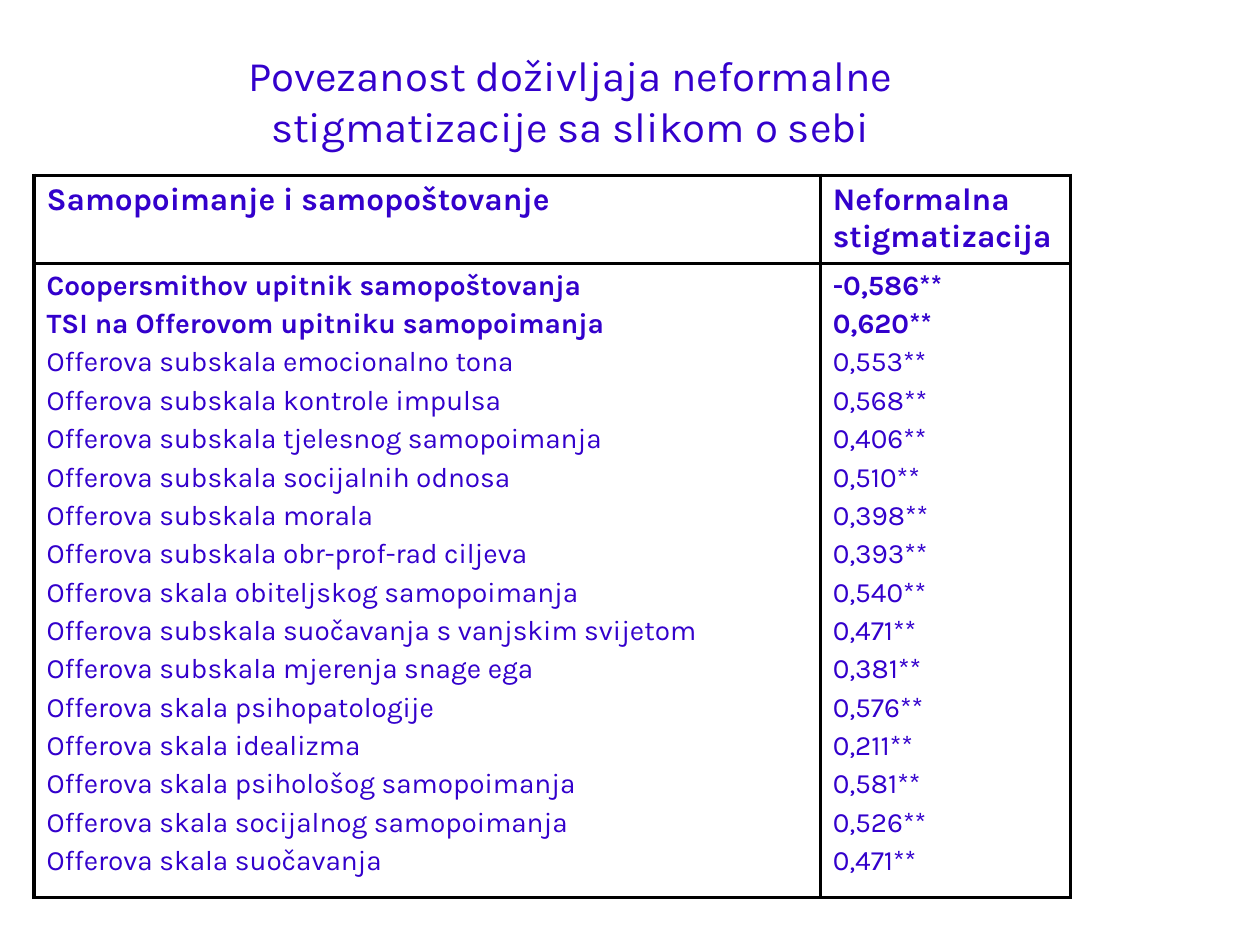
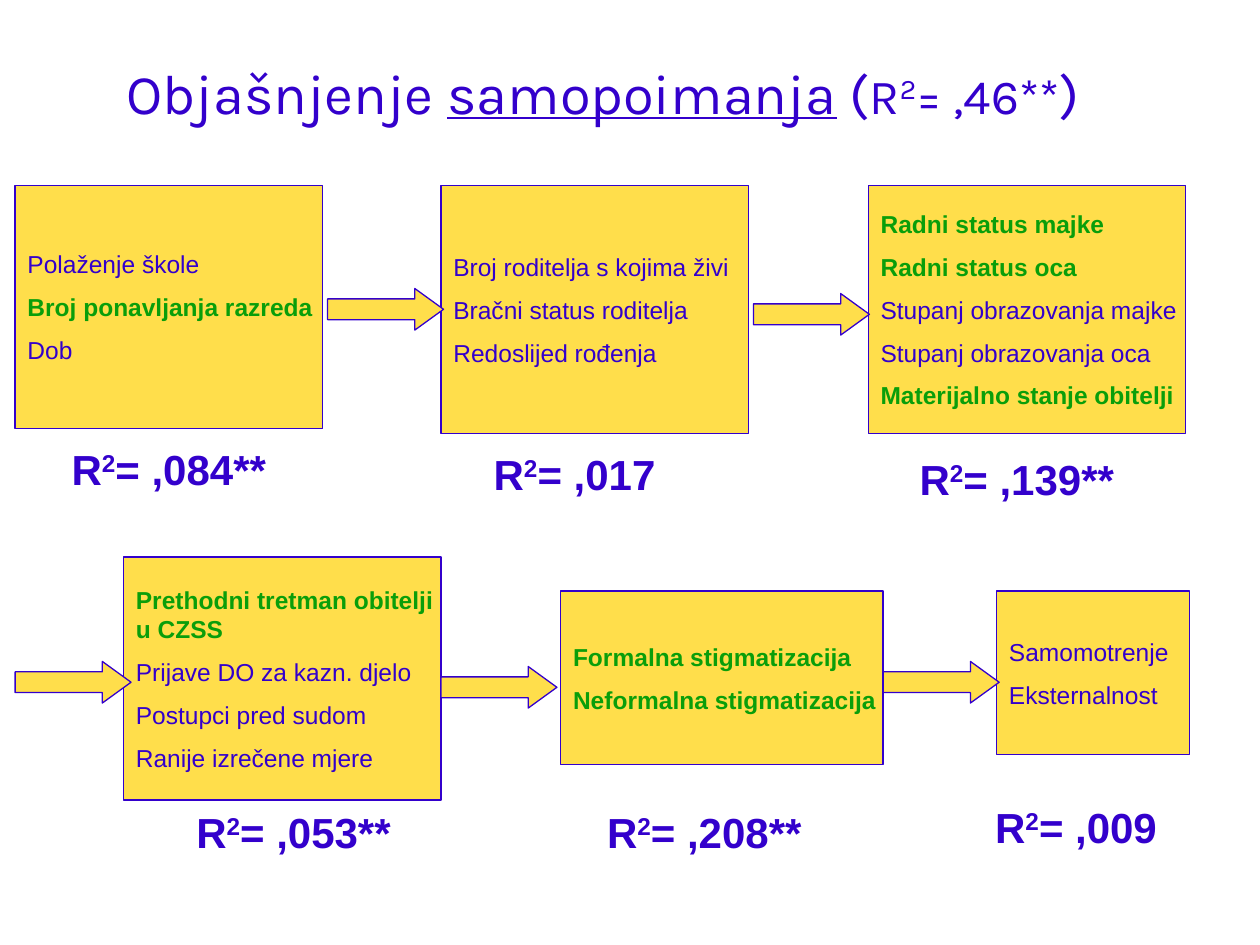
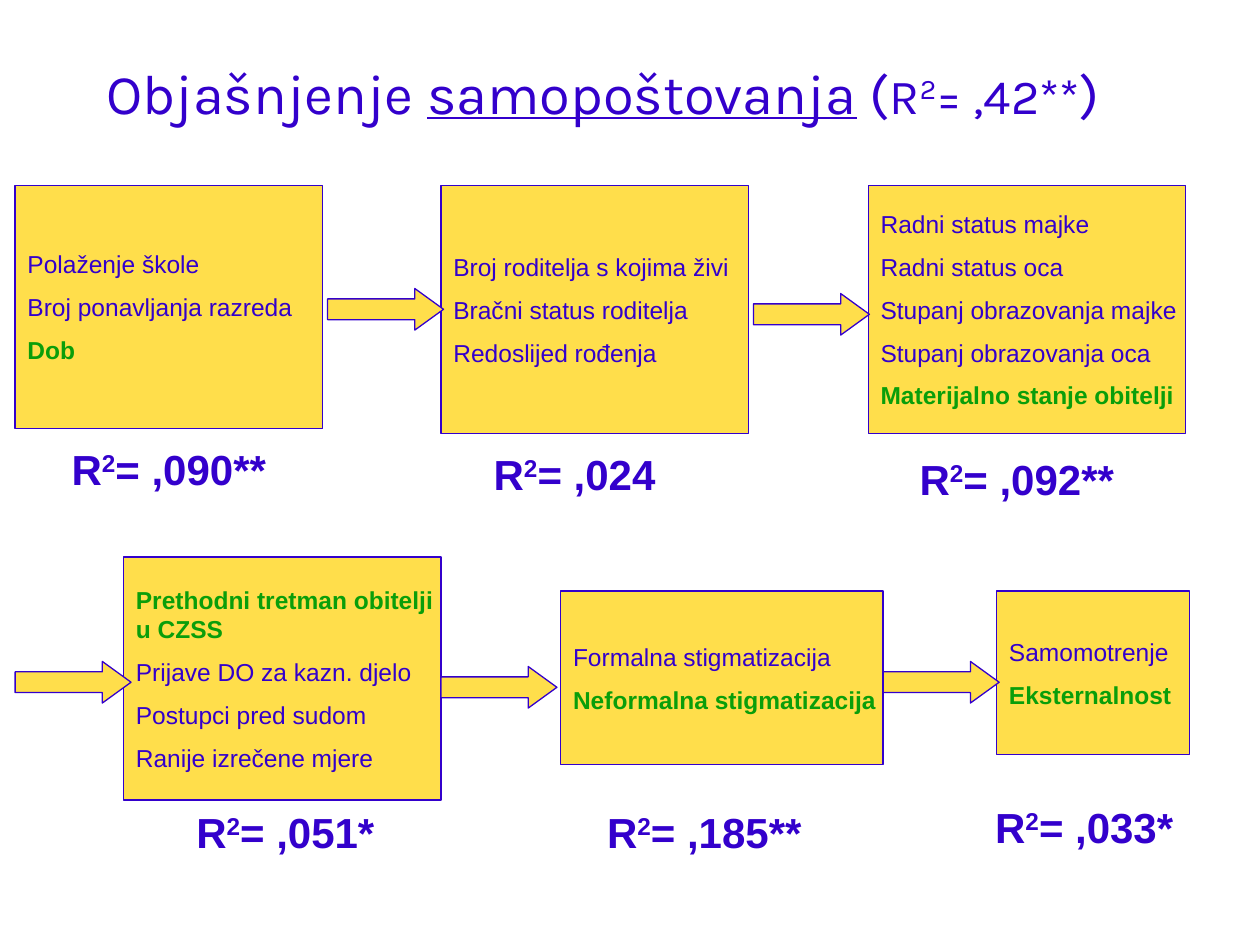
from lxml.etree import SubElement
from pptx import Presentation
from pptx.dml.color import RGBColor
from pptx.enum.shapes import MSO_SHAPE
from pptx.enum.text import MSO_ANCHOR, PP_ALIGN
from pptx.oxml.ns import qn
from pptx.util import Inches, Pt

COLORS = {"text": "3300CC", "key": "0A9E0A", "box": "FFDE4B",
          "border": "000000", "background": "FFFFFF"}
TITLE = {"name": "Karla", "size": Pt(32)}
TITLE_SMALL = {**TITLE, "size": Pt(28)}
HEADER = {"name": "Karla", "size": Pt(18), "bold": True}
ROW = {"name": "Karla", "size": Pt(16), "bold": False}
FACTOR = {"name": "Arial", "size": Pt(14), "bold": False}
RESULT = {"name": "Arial", "size": Pt(24), "bold": True}

SCALES = [
    ("Coopersmithov upitnik samopoštovanja", "-0,586**"),
    ("TSI na Offerovom upitniku samopoimanja", "0,620**"),
    ("Offerova subskala emocionalno tona", "0,553**"),
    ("Offerova subskala kontrole impulsa", "0,568**"),
    ("Offerova subskala tjelesnog samopoimanja", "0,406**"),
    ("Offerova subskala socijalnih odnosa", "0,510**"),
    ("Offerova subskala morala", "0,398**"),
    ("Offerova subskala obr-prof-rad ciljeva", "0,393**"),
    ("Offerova skala obiteljskog samopoimanja", "0,540**"),
    ("Offerova subskala suočavanja s vanjskim svijetom", "0,471**"),
    ("Offerova subskala mjerenja snage ega", "0,381**"),
    ("Offerova skala psihopatologije", "0,576**"),
    ("Offerova skala idealizma", "0,211**"),
    ("Offerova skala psihološog samopoimanja", "0,581**"),
    ("Offerova skala socijalnog samopoimanja", "0,526**"),
    ("Offerova skala suočavanja", "0,471**"),
]
STAGES = [
    {"box": (0.12, 1.47, 2.44, 1.93), "result": (0.47, 3.47),
     "factors": ["Polaženje škole", "Broj ponavljanja razreda", "Dob"]},
    {"box": (3.5, 1.47, 2.44, 1.97), "result": (3.82, 3.51),
     "factors": ["Broj roditelja s kojima živi", "Bračni status roditelja",
                 "Redoslijed rođenja"]},
    {"box": (6.89, 1.47, 2.52, 1.97), "result": (7.2, 3.55),
     "factors": ["Radni status majke", "Radni status oca",
                 "Stupanj obrazovanja majke", "Stupanj obrazovanja oca",
                 "Materijalno stanje obitelji"]},
    {"box": (0.98, 4.42, 2.52, 1.93), "result": (1.46, 6.35),
     "factors": ["Prethodni tretman obitelji", "u CZSS",
                 "Prijave DO za kazn. djelo", "Postupci pred sudom",
                 "Ranije izrečene mjere"]},
    {"box": (4.45, 4.69, 2.56, 1.38), "result": (4.72, 6.35),
     "factors": ["Formalna stigmatizacija", "Neformalna stigmatizacija"]},
    {"box": (7.91, 4.69, 1.53, 1.3), "result": (7.8, 6.31),
     "factors": ["Samomotrenje", "Eksternalnost"]},
]
ARROWS = [(2.6, 2.29), (5.98, 2.33), (0.12, 5.25), (3.5, 5.29), (7.01, 5.25)]
CONTINUED = {"u CZSS"}
MODELS = [
    {"outcome": "samopoimanja", "total": "= ,46**",
     "results": [",084**", ",017", ",139**", ",053**", ",208**", ",009"],
     "key": {"Broj ponavljanja razreda", "Radni status majke", "Radni status oca",
             "Materijalno stanje obitelji", "Prethodni tretman obitelji", "u CZSS",
             "Formalna stigmatizacija", "Neformalna stigmatizacija"}},
    {"outcome": "samopoštovanja", "total": "= ,42**",
     "results": [",090**", ",024", ",092**", ",051*", ",185**", ",033*"],
     "key": {"Dob", "Materijalno stanje obitelji", "Prethodni tretman obitelji",
             "u CZSS", "Neformalna stigmatizacija", "Eksternalnost"}},
]


def rgb(name):
    """Return the named colour."""
    return RGBColor.from_string(COLORS[name])


def add_run(p, text, fmt, color="text", raised=False):
    """Add a formatted run, raised as a superscript if asked."""
    r = p.add_run()
    r.text = text
    for key, value in fmt.items():
        setattr(r.font, key, value)
    r.font.color.rgb = rgb(color)
    if raised:
        r._r.get_or_add_rPr().set("baseline", "30000")


def add_squared(p, value, fmt):
    """Add R squared followed by its value."""
    add_run(p, "R", fmt)
    add_run(p, "2", fmt, raised=True)
    add_run(p, value, fmt)


def next_paragraph(tf, index):
    """Return the first paragraph of a frame, or a new one."""
    return tf.add_paragraph() if index else tf.paragraphs[0]


def add_title(slide, box):
    """Add a centred title box and return its paragraph."""
    tf = slide.shapes.add_textbox(*map(Inches, box)).text_frame
    for key, value in {"word_wrap": True, "vertical_anchor": MSO_ANCHOR.MIDDLE,
                       "margin_left": Inches(0.41)}.items():
        setattr(tf, key, value)
    p = tf.paragraphs[0]
    p.alignment = PP_ALIGN.CENTER
    return p


def add_block(slide, kind, box):
    """Add a filled and outlined preset shape."""
    sp = slide.shapes.add_shape(kind, *map(Inches, box))
    sp.shadow.inherit = False
    sp.fill.solid()
    sp.fill.fore_color.rgb = rgb("box")
    sp.line.color.rgb = rgb("text")
    sp.line.width = Pt(0.75)
    return sp


def add_stage(slide, stage, key_factors, value):
    """Add a box of factors with its result."""
    tf = add_block(slide, MSO_SHAPE.RECTANGLE, stage["box"]).text_frame
    tf.word_wrap = False
    tf.vertical_anchor = MSO_ANCHOR.MIDDLE
    for i, factor in enumerate(stage["factors"]):
        p = next_paragraph(tf, i)
        p.alignment = PP_ALIGN.LEFT
        if i and factor not in CONTINUED:
            p.space_before = Pt(7.7)
        key = factor in key_factors
        add_run(p, factor, {**FACTOR, "bold": key}, "key" if key else "text")
    tb = slide.shapes.add_textbox(*map(Inches, (*stage["result"], 1.83, 0.5)))
    tb.text_frame.word_wrap = True
    add_squared(tb.text_frame.paragraphs[0], "= " + value, RESULT)


def add_arrow(slide, left, top):
    """Add a block arrow between stages."""
    sp = add_block(slide, MSO_SHAPE.RIGHT_ARROW, (left, top, 0.92, 0.33))
    sp.adjustments[0] = 0.5
    sp.adjustments[1] = 0.69


def style_cell(cell):
    """Give a cell a plain fill and four borders."""
    tcPr = cell._tc.get_or_add_tcPr()
    for side in ("lnL", "lnR", "lnT", "lnB"):
        ln = SubElement(tcPr, qn("a:" + side), w=str(Pt(2)))
        fill = SubElement(ln, qn("a:solidFill"))
        SubElement(fill, qn("a:srgbClr"), val=COLORS["border"])
    cell.fill.solid()
    cell.fill.fore_color.rgb = rgb("background")


def add_scale_table(slide, left, top, widths, heights):
    """Add the table of scales and correlations."""
    size = (left, top, sum(widths), sum(heights))
    table = slide.shapes.add_table(2, 2, *map(Inches, size)).table
    for column, width in zip(table.columns, widths):
        column.width = Inches(width)
    for row, height in zip(table.rows, heights):
        row.height = Inches(height)
    headers = ("Samopoimanje i samopoštovanje", "Neformalna stigmatizacija")
    for col, (header, lines) in enumerate(zip(headers, zip(*SCALES))):
        head, body = table.cell(0, col), table.cell(1, col)
        style_cell(head)
        style_cell(body)
        add_run(head.text_frame.paragraphs[0], header, HEADER)
        for i, line in enumerate(lines):
            p = next_paragraph(body.text_frame, i)
            p.alignment = PP_ALIGN.JUSTIFY
            if i:
                p.space_before = Pt(3.2)
            add_run(p, line, {**ROW, "bold": i < 2})


def add_table_slide(prs):
    """Add the slide of correlations."""
    slide = prs.slides.add_slide(prs.slide_layouts[6])
    p = add_title(slide, (0.47, 0.17, 7.8, 1.25))
    add_run(p, "Povezanost doživljaja neformalne stigmatizacije sa slikom o sebi",
            {**TITLE, "size": Pt(24)})
    add_scale_table(slide, 0.27, 1.39, (6.24, 1.99), (0.69, 4.92))


def add_model_slide(prs, model):
    """Add a slide of the stages that explain one outcome."""
    slide = prs.slides.add_slide(prs.slide_layouts[6])
    p = add_title(slide, (0.35, 0.42, 8.56, 0.62))
    add_run(p, "Objašnjenje ", TITLE)
    add_run(p, model["outcome"], {**TITLE, "underline": True})
    add_run(p, " (", TITLE)
    add_squared(p, model["total"], TITLE_SMALL)
    add_run(p, ")", TITLE)
    for stage, value in zip(STAGES, model["results"]):
        add_stage(slide, stage, model["key"], value)
    for left, top in ARROWS:
        add_arrow(slide, left, top)


def main():
    """Build and save the presentation."""
    prs = Presentation()
    prs.slide_width, prs.slide_height = Inches(10), Inches(7.5)
    add_table_slide(prs)
    for model in MODELS:
        add_model_slide(prs, model)
    prs.save("out.pptx")


if __name__ == "__main__":
    main()
